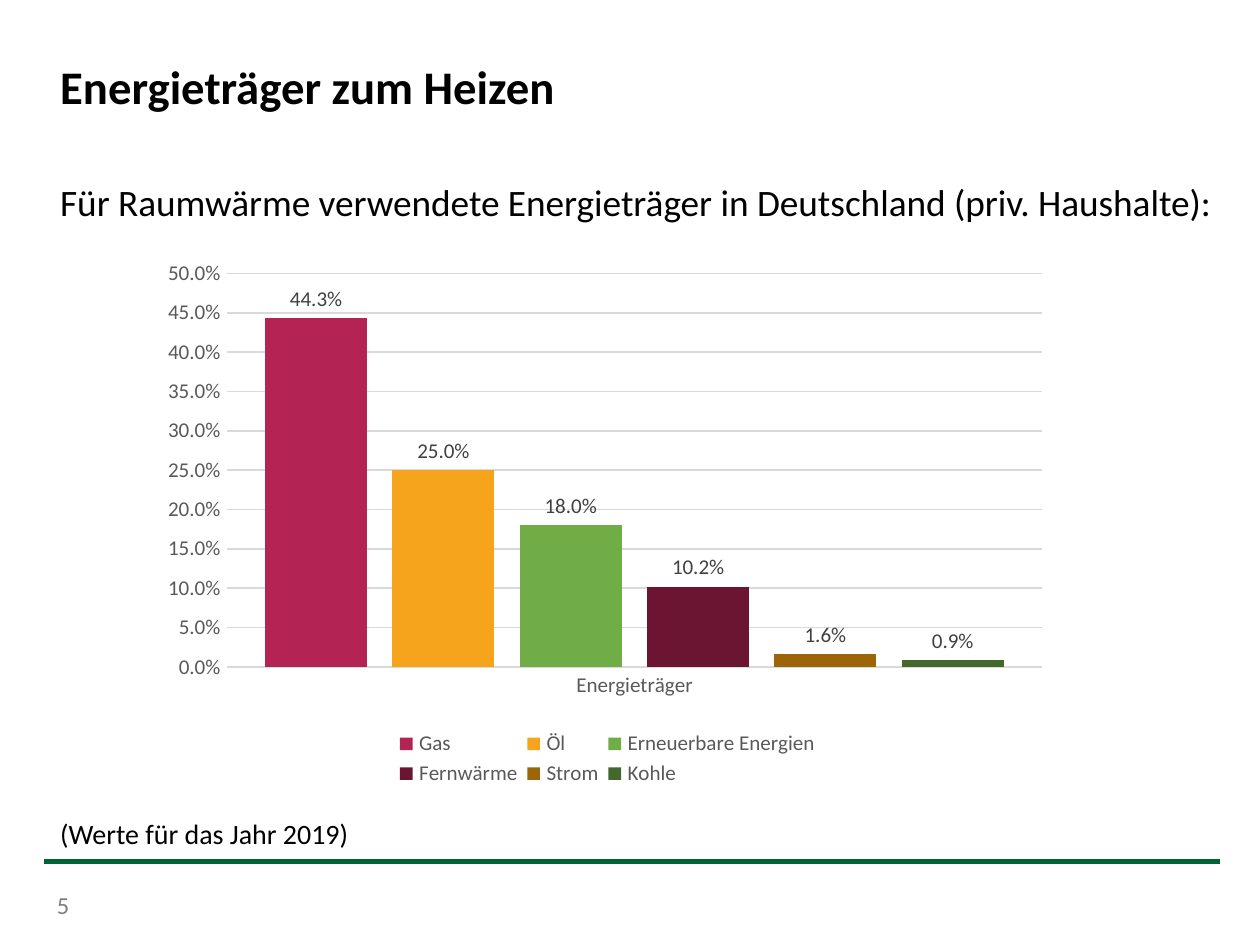
from lxml import etree
from pptx import Presentation
from pptx.chart.data import CategoryChartData
from pptx.dml.color import RGBColor
from pptx.enum.chart import XL_CHART_TYPE, XL_LABEL_POSITION, XL_LEGEND_POSITION, XL_TICK_MARK
from pptx.enum.shapes import MSO_CONNECTOR
from pptx.enum.text import MSO_ANCHOR
from pptx.oxml.ns import qn
from pptx.util import Inches, Pt

COLUMNS = XL_CHART_TYPE.COLUMN_CLUSTERED
OUTSIDE_END = XL_LABEL_POSITION.OUTSIDE_END
BOTTOM = XL_LEGEND_POSITION.BOTTOM
NO_TICKS = XL_TICK_MARK.NONE
STRAIGHT = MSO_CONNECTOR.STRAIGHT
TOP, MIDDLE = MSO_ANCHOR.TOP, MSO_ANCHOR.MIDDLE

FONT = "Calibri"
PERCENT = "0.0%"
WIDTH = 7.5
HEIGHT = WIDTH * 3 / 4
LEFT = 0.26
COLORS = {
    "text": "000000", "number": "808080", "axis": "595959", "label": "404040",
    "grid": "D9D9D9", "rule": "006533",
}
ENERGY_SOURCES = [
    ("Gas", 0.443, "B32354"),
    ("Öl", 0.25, "F5A41B"),
    ("Erneuerbare Energien", 0.18, "70AD47"),
    ("Fernwärme", 0.102, "6B1532"),
    ("Strom", 0.016, "9C6507"),
    ("Kohle", 0.009, "43682B"),
]


def set_font(font, size, color, bold=False):
    formats = {"name": FONT, "size": Pt(size), "bold": bold}
    for attribute, value in formats.items():
        setattr(font, attribute, value)
    font.color.rgb = RGBColor.from_string(COLORS[color])


def make_layout(**shares):
    layout = etree.Element(qn("c:layout"))
    manual = etree.SubElement(layout, qn("c:manualLayout"))
    for name, value in shares.items():
        etree.SubElement(manual, qn("c:" + name)).set("val", str(value))
    return layout


presentation = Presentation()
presentation.slide_width = Inches(WIDTH)
presentation.slide_height = Inches(HEIGHT)
slide = presentation.slides.add_slide(presentation.slide_layouts[6])

# Footer rule
rule = slide.shapes.add_connector(
    STRAIGHT, Inches(LEFT), Inches(5.13), Inches(7.26), Inches(5.13))
rule.line.color.rgb = RGBColor.from_string(COLORS["rule"])
rule.line.width = Pt(2.25)
etree.SubElement(rule._element.spPr, qn("a:effectLst"))

# Slide number, lead sentence, title and note
texts = [
    ("5", (0.24, 5.25, 0.6, 0.28), 10.5, "number", False, 1.0, TOP),
    ("Für Raumwärme verwendete Energieträger in Deutschland (priv. Haushalte):",
     (LEFT, 1.05, 7.11, 3.97), 16, "text", False, 0.9, TOP),
    ("Energieträger zum Heizen", (LEFT, 0.31, 6.99, 0.44), 20, "text", True, 0.9, MIDDLE),
    ("(Werte für das Jahr 2019)", (LEFT, 4.81, 1.94, 0.3), 12, "text", False, 1.0, TOP),
]
for text, box, size, color, bold, spacing, anchor in texts:
    frame = slide.shapes.add_textbox(*map(Inches, box)).text_frame
    frame.word_wrap = True
    frame.vertical_anchor = anchor
    paragraph = frame.paragraphs[0]
    paragraph.line_spacing = spacing
    run = paragraph.add_run()
    run.text = text
    set_font(run.font, size, color, bold)

# Column chart
chart_data = CategoryChartData(number_format=PERCENT)
chart_data.categories = ["Energieträger"]
for name, share, color in ENERGY_SOURCES:
    chart_data.add_series(name, [share])
chart = slide.shapes.add_chart(
    COLUMNS, Inches(0.92), Inches(1.5), Inches(5.39), Inches(3.21), chart_data).chart
set_font(chart.font, 10, "text")
chart.has_title = False

plot = chart.plots[0]
plot.vary_by_categories = False
plot.gap_width = 75
plot.overlap = -25
label_formats = {"show_value": True, "number_format": PERCENT,
                 "number_format_is_linked": False, "position": OUTSIDE_END}
for series, (name, share, color) in zip(plot.series, ENERGY_SOURCES):
    series.format.fill.solid()
    series.format.fill.fore_color.rgb = RGBColor.from_string(color)
    labels = series.data_labels
    for attribute, value in label_formats.items():
        setattr(labels, attribute, value)
    set_font(labels.font, 9, "label")

# Axes and gridlines
value_axis, category_axis = chart.value_axis, chart.category_axis
for axis in (value_axis, category_axis):
    axis.major_tick_mark = NO_TICKS
    axis.minor_tick_mark = NO_TICKS
    set_font(axis.tick_labels.font, 9, "axis")
value_axis.minimum_scale = 0
value_axis.maximum_scale = 0.5
value_axis.major_unit = 0.05
value_axis.tick_labels.number_format = PERCENT
value_axis.tick_labels.number_format_is_linked = False
value_axis.format.line.fill.background()
value_axis.has_major_gridlines = True
for line in (value_axis.major_gridlines.format.line, category_axis.format.line):
    line.color.rgb = RGBColor.from_string(COLORS["grid"])
    line.width = Pt(0.75)

# Legend in two rows, plot area above it
chart.has_legend = True
legend = chart.legend
legend.position = BOTTOM
legend.include_in_layout = False
set_font(legend.font, 9, "axis")
legend._element.find(qn("c:legendPos")).addnext(
    make_layout(xMode="edge", yMode="edge", x=0.26, y=0.88, w=0.48, h=0.12))
plot_area = chart._chartSpace.chart.plotArea
for layout in plot_area.findall(qn("c:layout")):
    plot_area.remove(layout)
plot_area.insert(0, make_layout(
    layoutTarget="inner", xMode="edge", yMode="edge", x=0.08, y=0.04, w=0.9, h=0.73))

presentation.save("out.pptx")
